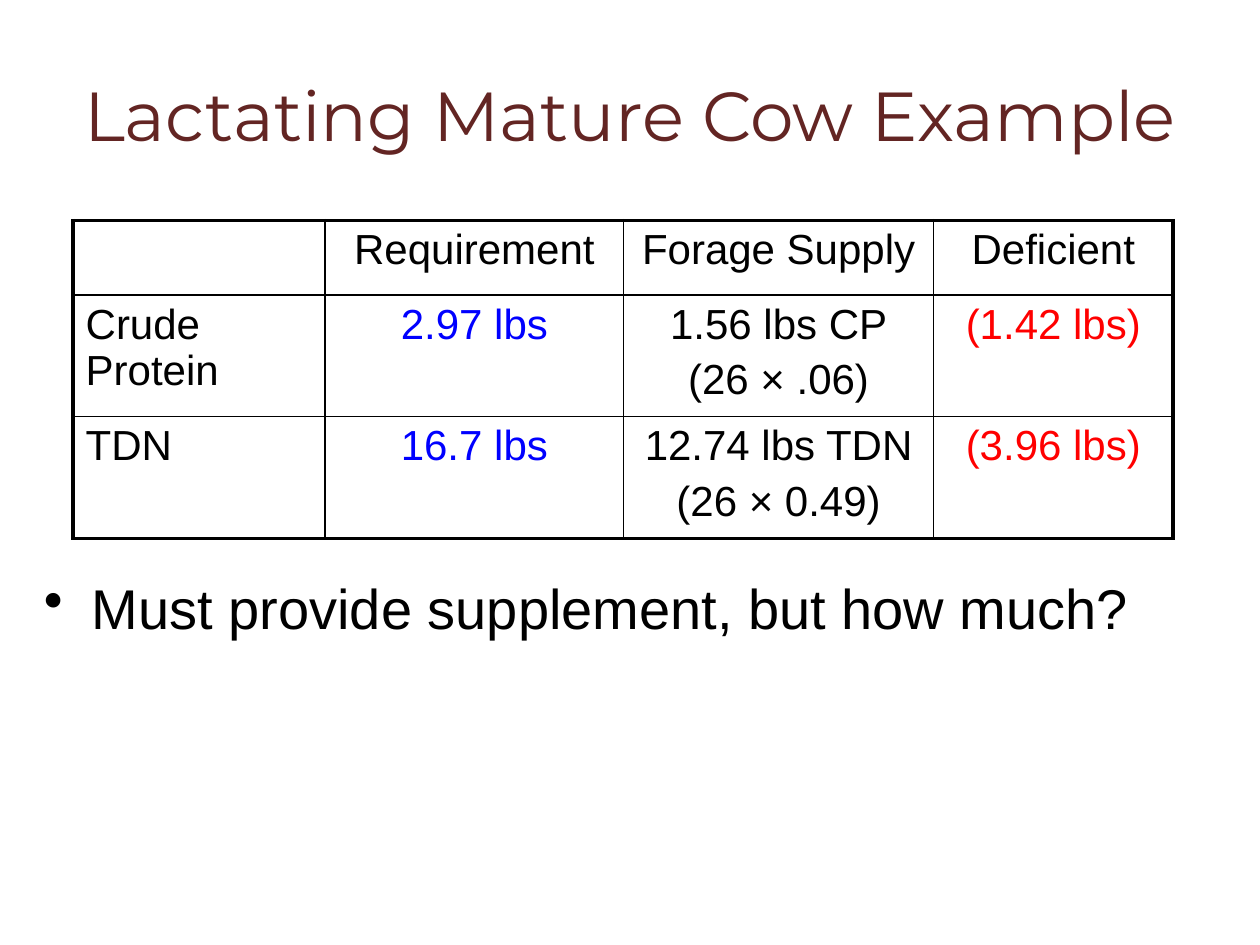
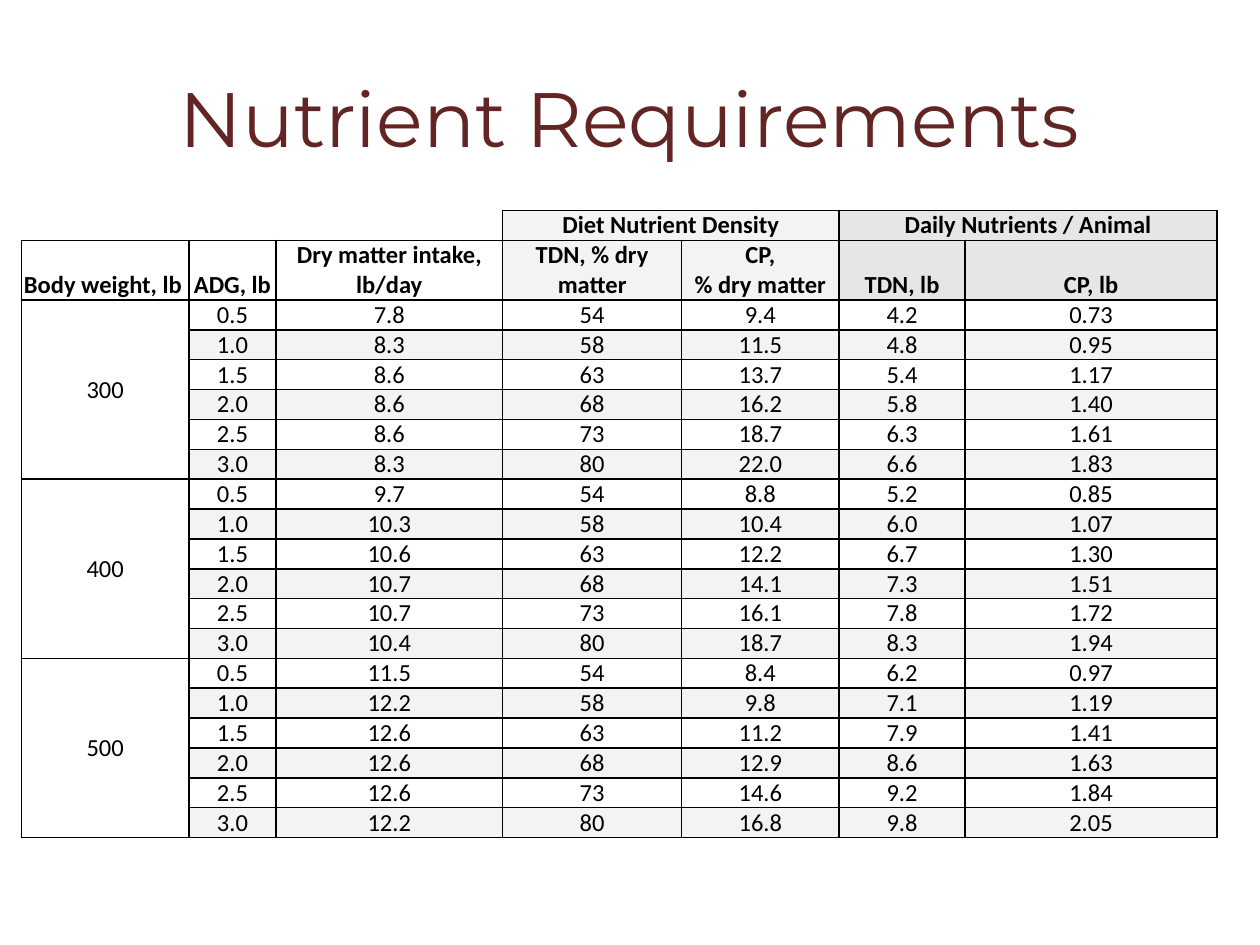
from lxml import etree
from pptx import Presentation
from pptx import util as u
from pptx.dml.color import RGBColor
from pptx.enum import text
from pptx.oxml import ns

Inches, Pt = u.Inches, u.Pt
BLACK, WHITE, MAROON = "000000", "FFFFFF", "632523"
BLUE, RED = "0000FF", "FF0000"
PALE, GREY = "F3F3F3", "E6E6E6"
CENTER, LEFT = text.PP_ALIGN.CENTER, text.PP_ALIGN.LEFT
TOP, MIDDLE, BOTTOM = (text.MSO_ANCHOR.TOP, text.MSO_ANCHOR.MIDDLE,
                       text.MSO_ANCHOR.BOTTOM)

SUPPLY_ROWS = [
    ["", "Requirement", "Forage Supply", "Deficient"],
    ["Crude Protein", "2.97 lbs", "1.56 lbs CP\n(26 × .06)", "(1.42 lbs)"],
    ["TDN", "16.7 lbs", "12.74 lbs TDN\n(26 × 0.49)", "(3.96 lbs)"],
]
SUPPLY_COLORS = [BLACK, BLUE, BLACK, RED]

HEADINGS = ["Body weight, lb", "ADG, lb", "Dry matter intake, lb/day",
            "TDN, % dry matter", "CP,\n% dry matter", "TDN, lb", "CP, lb"]
HEADING_FILLS = [WHITE] * 3 + [PALE] * 2 + [GREY] * 2
GAINS = ["0.5", "1.0", "1.5", "2.0", "2.5", "3.0"]
TDN_SHARES = ["54", "58", "63", "68", "73", "80"]
NEEDS_BY_WEIGHT = {
    "300": [("7.8", "9.4", "4.2", "0.73"), ("8.3", "11.5", "4.8", "0.95"),
            ("8.6", "13.7", "5.4", "1.17"), ("8.6", "16.2", "5.8", "1.40"),
            ("8.6", "18.7", "6.3", "1.61"), ("8.3", "22.0", "6.6", "1.83")],
    "400": [("9.7", "8.8", "5.2", "0.85"), ("10.3", "10.4", "6.0", "1.07"),
            ("10.6", "12.2", "6.7", "1.30"), ("10.7", "14.1", "7.3", "1.51"),
            ("10.7", "16.1", "7.8", "1.72"), ("10.4", "18.7", "8.3", "1.94")],
    "500": [("11.5", "8.4", "6.2", "0.97"), ("12.2", "9.8", "7.1", "1.19"),
            ("12.6", "11.2", "7.9", "1.41"), ("12.6", "12.9", "8.6", "1.63"),
            ("12.6", "14.6", "9.2", "1.84"), ("12.2", "16.8", "9.8", "2.05")],
}


def rgb(code):
    """Turn a hex string into a colour."""
    return RGBColor.from_string(code)


def write(frame, words, size=24, font="Arial", color=BLACK, bold=False,
          align=LEFT, bullet=None, gap=0):
    """Fill a text frame, one paragraph for each line of words."""
    frame.word_wrap = True
    for index, line in enumerate(words.split("\n")):
        para = frame.add_paragraph() if index else frame.paragraphs[0]
        para.alignment = align
        if index:
            para.space_before = Pt(gap)
        if bullet:
            props = para._p.get_or_add_pPr()
            props.set("marL", str(Inches(0.38)))
            props.set("indent", str(-Inches(0.38)))
            etree.SubElement(props, ns.qn("a:buChar"), char=bullet)
        if not line:
            etree.SubElement(para._p, ns.qn("a:endParaRPr"), sz=str(size * 100))
            continue
        span = para.add_run()
        span.text = line
        span.font.size, span.font.name = Pt(size), font
        span.font.bold, span.font.color.rgb = bold, rgb(color)


def add_text(page, box, words, anchor=TOP, **style):
    """Place a text box on the page."""
    frame = page.shapes.add_textbox(*map(Inches, box)).text_frame
    frame.vertical_anchor = anchor
    write(frame, words, **style)


def add_title(page, box, words, size):
    """Place the slide title."""
    add_text(page, box, words, anchor=MIDDLE, size=size, font="Montserrat",
             color=MAROON, align=CENTER)


def add_grid(page, left, top, widths, heights):
    """Place a plain table with the given column widths and row heights."""
    table = page.shapes.add_table(
        len(heights), len(widths), Inches(left), Inches(top),
        Inches(sum(widths)), Inches(sum(heights))).table
    table.first_row = table.horz_banding = False
    for column, width in zip(table.columns, widths):
        column.width = Inches(width)
    for row, height in zip(table.rows, heights):
        row.height = Inches(height)
    return table


def format_cell(cell, words, borders, fill=None, anchor=TOP, margins=None,
                **style):
    """Set a cell's text, fill and left, right, top and bottom border widths."""
    props = cell._tc.get_or_add_tcPr()
    for side, width in zip("LRTB", borders):
        line = etree.SubElement(props, ns.qn(f"a:ln{side}"), w=str(Pt(width)))
        if width:
            solid = etree.SubElement(line, ns.qn("a:solidFill"))
            etree.SubElement(solid, ns.qn("a:srgbClr"), val=BLACK)
        else:
            etree.SubElement(line, ns.qn("a:noFill"))
    if fill:
        cell.fill.solid()
        cell.fill.fore_color.rgb = rgb(fill)
    else:
        cell.fill.background()
    if margins:
        cell.margin_left, cell.margin_right = [Inches(margins[0])] * 2
        cell.margin_top, cell.margin_bottom = [Inches(margins[1])] * 2
    cell.vertical_anchor = anchor
    write(cell.text_frame, words, **style)


def add_supply_table(page, left, top):
    """Compare requirement and forage supply in a heavily framed table."""
    table = add_grid(page, left, top, [2, 2.37, 2.46, 1.9], [0.59, 0.91, 0.91])
    last_row, last_column = len(SUPPLY_ROWS) - 1, len(SUPPLY_COLORS) - 1
    for r, row in enumerate(SUPPLY_ROWS):
        for c, words in enumerate(row):
            outer = (c == 0, c == last_column, r == 0, r == last_row)
            format_cell(table.cell(r, c), words,
                        [2.25 if edge else 1 for edge in outer],
                        color=SUPPLY_COLORS[c] if r else BLACK,
                        align=CENTER if c else LEFT, gap=4.8)


def add_needs_table(page, left, top, height):
    """List nutrient needs by body weight and daily gain."""
    unit = height / 21
    table = add_grid(page, left, top, [1.33, 0.69, 1.8, 1.42, 1.25, 1, 2],
                     [unit, 2 * unit] + [unit] * 18)
    ruled = (1, 1, 1, 1)
    base = dict(size=14, font="Calibri", align=CENTER, margins=(0.02, 0))
    head = dict(base, bold=True, anchor=BOTTOM)

    groups = ["", "", "", "Diet Nutrient Density", "",
              "Daily Nutrients / Animal", ""]
    for c, (group, heading, fill) in enumerate(
            zip(groups, HEADINGS, HEADING_FILLS)):
        if c < 3:
            format_cell(table.cell(0, c), group, (0, c == 2, 0, 1), **head)
        else:
            format_cell(table.cell(0, c), group, ruled, fill, **head)
        format_cell(table.cell(1, c), heading, ruled, fill,
                    **dict(head, align=CENTER if c else LEFT))
    for c in (3, 5):
        table.cell(0, c).merge(table.cell(0, c + 1))

    for block, (weight, needs) in enumerate(NEEDS_BY_WEIGHT.items()):
        first = 2 + block * len(GAINS)
        for step, (intake, *rest) in enumerate(needs):
            r = first + step
            format_cell(table.cell(r, 0), "" if step else weight, ruled, WHITE,
                        anchor=MIDDLE, **base)
            values = [GAINS[step], intake, TDN_SHARES[step], *rest]
            for c, value in enumerate(values, 1):
                format_cell(table.cell(r, c), value, ruled,
                            PALE if step % 2 else WHITE, **base)
        table.cell(first, 0).merge(table.cell(first + len(GAINS) - 1, 0))


def build_cow_example(page):
    """Build the slide with the lactating cow example."""
    add_title(page, (0.25, 0.3, 9.5, 1.2), "Lactating Mature Cow Example", 39.6)
    add_supply_table(page, 0.58, 1.75)
    add_text(page, (0.25, 4.5, 9.25, 2.25),
             "Must provide supplement, but how much?", size=32, bullet="•")


def build_requirements(page):
    """Build the slide with the nutrient requirements."""
    add_title(page, (0.5, 0.3, 9, 1.25), "Nutrient Requirements", 44)
    add_needs_table(page, 0.17, 1.67, 4.98)


def main():
    """Build and save the deck."""
    deck = Presentation()
    deck.slide_width, deck.slide_height = Inches(10), Inches(7.5)
    for build in (build_cow_example, build_requirements):
        build(deck.slides.add_slide(deck.slide_layouts[6]))
    deck.save("out.pptx")


if __name__ == "__main__":
    main()
